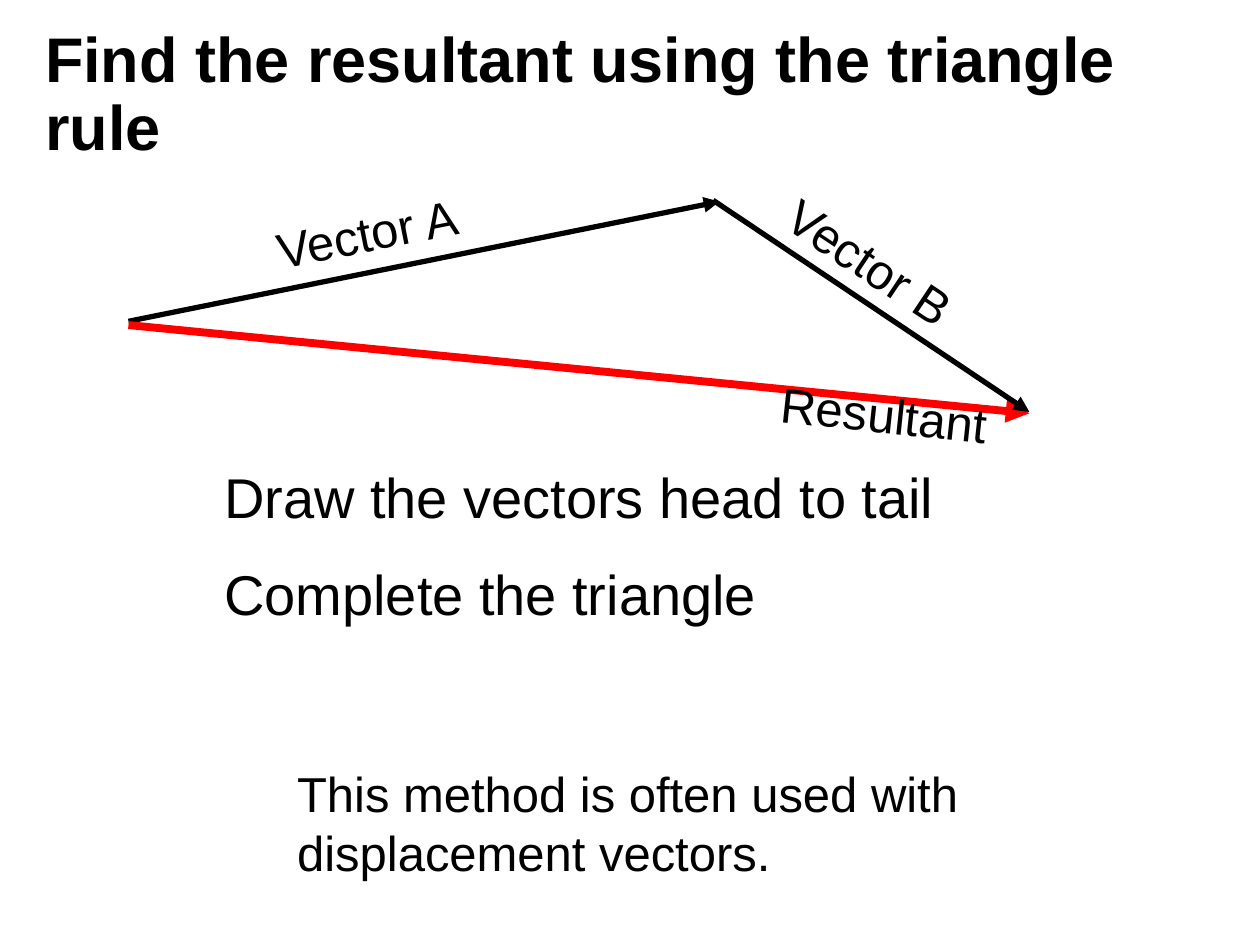
from lxml import etree
from pptx import Presentation
from pptx.dml.color import RGBColor
from pptx.enum.shapes import MSO_CONNECTOR
from pptx.oxml.ns import qn
from pptx.util import Inches, Pt

STRAIGHT = MSO_CONNECTOR.STRAIGHT
BLACK = RGBColor(0x00, 0x00, 0x00)
RED = RGBColor(0xFF, 0x00, 0x00)
BLANK_LAYOUT = 6


class SlideBuilder:
    font_name = "Arial"
    text_color = BLACK

    def __init__(self, slide):
        self.slide = slide

    def text(self, content, left, top, width, height, size,
             rotation=0, bold=False, line_spacing=None, wrap=True):
        box = self.slide.shapes.add_textbox(
            Inches(left), Inches(top), Inches(width), Inches(height))
        box.rotation = rotation
        box.text_frame.word_wrap = wrap
        paragraph = box.text_frame.paragraphs[0]
        paragraph.text = content
        paragraph.line_spacing = line_spacing
        font = paragraph.font
        font.name = self.font_name
        font.size = Pt(size)
        font.bold = bold
        font.color.rgb = self.text_color

    def arrow(self, start, end, color, width):
        """Draw a straight vector with its arrowhead at the end point."""
        connector = self.slide.shapes.add_connector(
            STRAIGHT, *(Inches(value) for value in (*start, *end)))
        connector.line.color.rgb = color
        connector.line.width = Pt(width)
        line = connector.line._get_or_add_ln()
        etree.SubElement(line, qn("a:tailEnd"), type="triangle")
        etree.SubElement(connector._element.spPr, qn("a:effectLst"))


def main():
    presentation = Presentation()
    presentation.slide_width = Inches(10)
    presentation.slide_height = Inches(7.5)
    slide = presentation.slides.add_slide(
        presentation.slide_layouts[BLANK_LAYOUT])
    builder = SlideBuilder(slide)

    builder.text("Draw the vectors head to tail", 1.68, 3.62, 6.4, 0.64, 32)
    builder.arrow((1.02, 2.55), (5.71, 1.6), BLACK, 3)
    builder.arrow((1.02, 2.58), (8.17, 3.28), RED, 4.5)
    builder.text("Resultant", 6.1, 3.02, 2.17, 0.57, 28, rotation=6.2)
    builder.arrow((5.66, 1.59), (8.17, 3.27), BLACK, 3)
    builder.text("Complete the triangle", 1.68, 4.39, 5.45, 0.64, 32)
    builder.text("This method is often used with displacement vectors.",
                 2.26, 6.01, 6, 1.04, 28)
    builder.text("Vector A", 2.09, 1.54, 1.87, 0.57, 28, rotation=348.7)
    builder.text("Vector B", 6.07, 1.8, 1.69, 0.57, 28, rotation=33.8,
                 wrap=False)
    builder.text("Find the resultant using the triangle rule",
                 0.26, 0.17, 9.54, 0.65, 36, bold=True, line_spacing=0.9)

    presentation.save("out.pptx")


if __name__ == "__main__":
    main()
